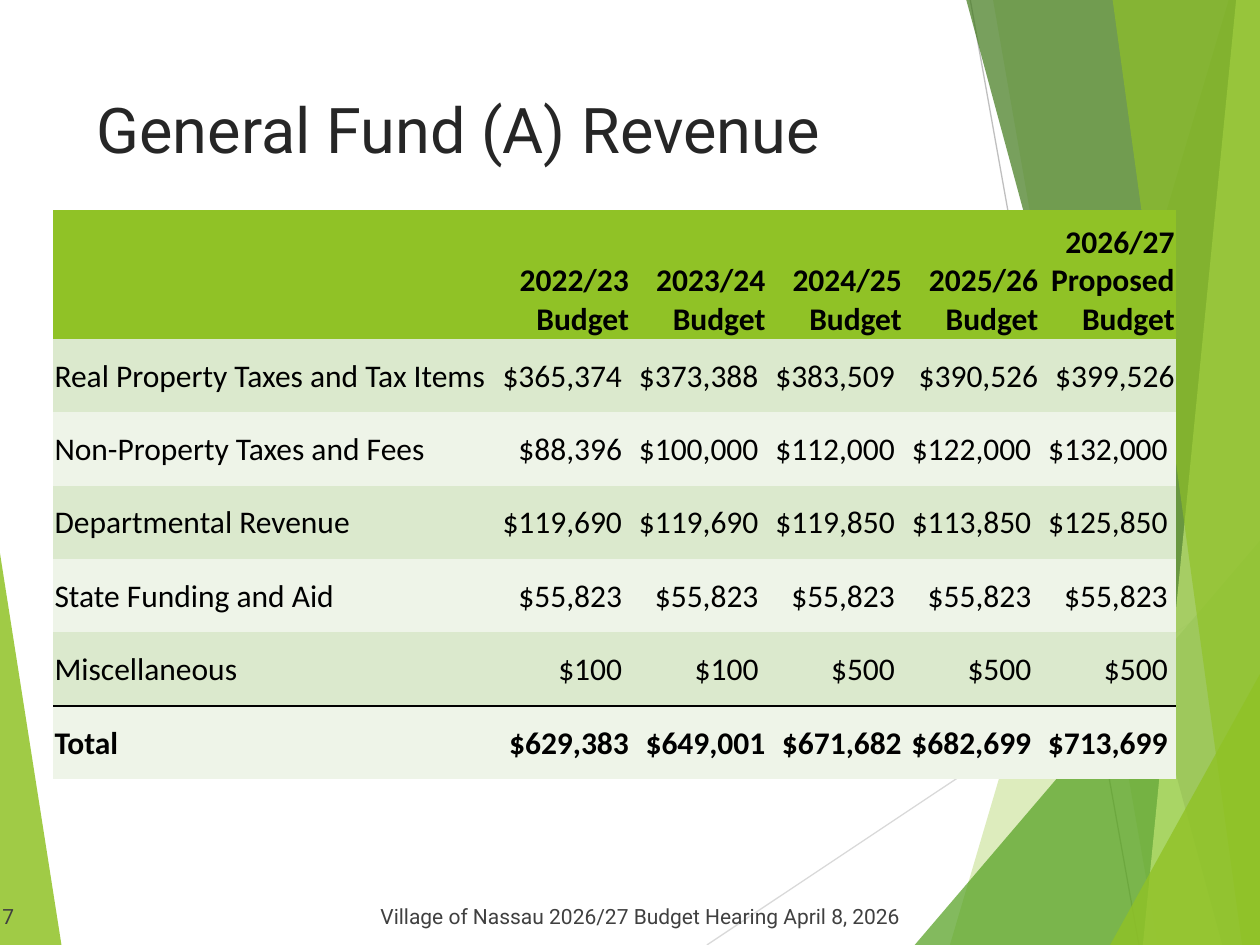
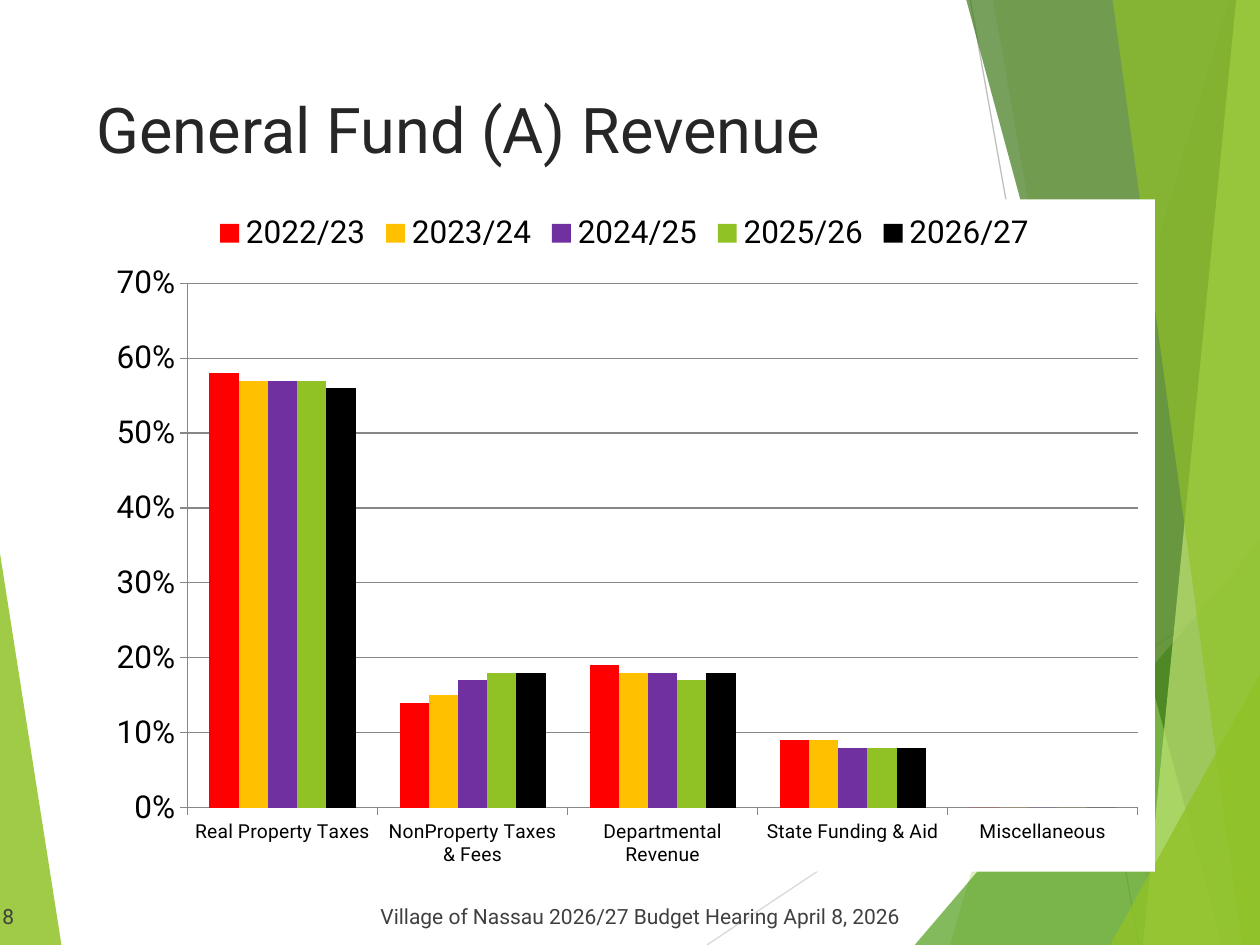
from lxml import etree
from pptx import Presentation
from pptx import util as u
from pptx.chart import data as chart_data
from pptx.dml.color import RGBColor
from pptx.enum import chart as charts, shapes, text
from pptx.oxml import parse_xml
from pptx.oxml.ns import nsdecls, qn

LIME = RGBColor(0x90, 0xC2, 0x26)
GREEN = RGBColor(0x54, 0xA0, 0x21)
FOREST = RGBColor(0x3F, 0x78, 0x19)
PALE_LIME = RGBColor(0xC0, 0xE4, 0x74)
LIGHT_GRAY = RGBColor(0xD9, 0xD9, 0xD9)
MID_GRAY = RGBColor(0xBF, 0xBF, 0xBF)
AXIS_GRAY = RGBColor(0x87, 0x87, 0x87)
TITLE_GRAY = RGBColor(0x26, 0x26, 0x26)
FOOTER_GRAY = RGBColor(0x40, 0x40, 0x40)
ROW_DARK = RGBColor(0xDB, 0xE9, 0xCD)
ROW_LIGHT = RGBColor(0xEE, 0xF4, 0xE8)
RED = RGBColor(0xFF, 0x00, 0x00)
AMBER = RGBColor(0xFF, 0xC0, 0x00)
PURPLE = RGBColor(0x70, 0x30, 0xA0)
BLACK = RGBColor(0x00, 0x00, 0x00)

WIDTH, HEIGHT = 25.4, 19.05
NO_STYLE = "{2D5ABB26-0587-4C30-8999-92F81FD0307C}"
TITLE = "General Fund (A) Revenue"
FOOTER = "Village of Nassau 2026/27 Budget Hearing April 8, 2026"

YEARS = ["2022/23", "2023/24", "2024/25", "2025/26", "2026/27"]
HEADERS = [f"{year}\nBudget" for year in YEARS[:-1]] + ["2026/27 Proposed\nBudget"]
REVENUE = [
    ("Real Property Taxes and Tax Items", 365374, 373388, 383509, 390526, 399526),
    ("Non-Property Taxes and Fees", 88396, 100000, 112000, 122000, 132000),
    ("Departmental Revenue", 119690, 119690, 119850, 113850, 125850),
    ("State Funding and Aid", 55823, 55823, 55823, 55823, 55823),
    ("Miscellaneous", 100, 100, 500, 500, 500),
    ("Total", 629383, 649001, 671682, 682699, 713699),
]
FLUSH_CELLS = {(1, 4), (1, 5), (6, 1), (6, 2), (6, 3)}

CATEGORIES = ["Real Property Taxes", "NonProperty Taxes & Fees",
              "Departmental Revenue", "State Funding & Aid", "Miscellaneous"]
SHARES = [
    (0.58, 0.14, 0.19, 0.09, 0),
    (0.57, 0.15, 0.18, 0.09, 0),
    (0.57, 0.17, 0.18, 0.08, 0),
    (0.57, 0.18, 0.17, 0.08, 0),
    (0.56, 0.18, 0.18, 0.08, 0),
]
SERIES_COLORS = [RED, AMBER, PURPLE, LIME, BLACK]


class Deck:
    heading_font = "Roboto"
    table_font = "Calibri"

    def __init__(self):
        self.presentation = Presentation()
        self.presentation.slide_width = u.Cm(WIDTH)
        self.presentation.slide_height = u.Cm(HEIGHT)
        self.slide = None

    def add_slide(self, title, number):
        self.slide = self.presentation.slides.add_slide(self.presentation.slide_layouts[6])
        self.backdrop()
        self.footer(number)
        self.textbox(title, (1.7, 1.7, 17.63, 3.66), 36, TITLE_GRAY)

    def backdrop(self):
        self.polygon([(0, 11.15), (1.24, HEIGHT), (0, HEIGHT)], LIME, 85)
        self.line((14.25, HEIGHT), (WIDTH, 11.62), LIGHT_GRAY)
        self.line((19.56, 0), (22.96, HEIGHT), MID_GRAY)
        self.panel(24.77, 19.15, LIME, 30)
        self.panel(20.02, 23.34, LIME, 20)
        self.corner(18.44, 10.9, GREEN, 72)
        self.panel(19.48, 24.64, FOREST, 70)
        self.panel(24.92, 23.04, PALE_LIME, 70)
        self.panel(22.43, 25.04, LIME, 65)
        self.corner(22.38, 13.59, LIME, 80)

    def panel(self, top_x, bottom_x, color, opacity):
        self.polygon([(top_x, 0), (bottom_x, HEIGHT), (WIDTH, HEIGHT), (WIDTH, 0)],
                     color, opacity)

    def corner(self, left, top, color, opacity):
        self.polygon([(left, HEIGHT), (WIDTH, top), (WIDTH, HEIGHT)], color, opacity)

    def polygon(self, points, color, opacity):
        start, *rest = [(u.Cm(x), u.Cm(y)) for x, y in points]
        builder = self.slide.shapes.build_freeform(*start)
        builder.add_line_segments(rest, close=True)
        shape = builder.convert_to_shape()
        shape.shadow.inherit = False
        shape.line.fill.background()
        shape.fill.solid()
        shape.fill.fore_color.rgb = color
        fill_color = shape._element.spPr.find(qn("a:solidFill"))[0]
        etree.SubElement(fill_color, qn("a:alpha"), val=str(opacity * 1000))

    def line(self, start, end, color):
        connector = self.slide.shapes.add_connector(
            shapes.MSO_CONNECTOR.STRAIGHT, *map(u.Cm, start + end))
        connector.line.color.rgb = color
        connector.line.width = u.Pt(0.75)
        etree.SubElement(connector._element.spPr, qn("a:effectLst"))

    def textbox(self, words, box, size, color, anchor=text.MSO_ANCHOR.TOP, tab=None):
        text_frame = self.slide.shapes.add_textbox(*map(u.Cm, box)).text_frame
        text_frame.word_wrap = True
        text_frame.vertical_anchor = anchor
        text_frame.text = words
        paragraph = text_frame.paragraphs[0]
        if tab:
            tabs = etree.SubElement(paragraph._p.get_or_add_pPr(), qn("a:tabLst"))
            etree.SubElement(tabs, qn("a:tab"), pos=str(u.Cm(tab)), algn="l")
        self.format_runs(paragraph, self.heading_font, size, color)

    def format_runs(self, paragraph, name, size, color, bold=False):
        for run in paragraph.runs:
            run.font.name = name
            run.font.size = u.Pt(size)
            run.font.color.rgb = color
            run.font.bold = bold

    def footer(self, number):
        self.textbox(f"{number}\t{FOOTER}", (-0.2, 17.83, 19.69, 1.02), 12, FOOTER_GRAY,
                     text.MSO_ANCHOR.BOTTOM, tab=7.62)

    def table(self, headers, rows, flush_cells):
        columns = [8.89] + [2.75] * len(headers)
        heights = [2.6] + [1.48] * len(rows)
        frame = self.slide.shapes.add_table(
            len(heights), len(columns), u.Cm(1.07), u.Cm(4.23),
            u.Cm(sum(columns)), u.Cm(sum(heights)))
        table = frame.table
        table._tbl.tblPr.find(qn("a:tableStyleId")).text = NO_STYLE
        for column, width in zip(table.columns, columns):
            column.width = u.Cm(width)
        for row, height in zip(table.rows, heights):
            row.height = u.Cm(height)
        grid = [["", *headers]]
        grid += [[label, *(f"${amount:,}" for amount in amounts)] for label, *amounts in rows]
        last = len(rows)
        for r, values in enumerate(grid):
            fill = LIME if r == 0 else ROW_DARK if r % 2 else ROW_LIGHT
            for c, value in enumerate(values):
                padded = r and c and (r, c) not in flush_cells
                cell = table.cell(r, c)
                self.cell(cell, value, fill, header=r == 0, bold=r in (0, last),
                          numeric=c > 0, right=0.17 if padded else 0.03)
                if r in (last - 1, last):
                    self.cell_border(cell, "a:lnB" if r < last else "a:lnT")

    def cell(self, cell, value, fill, header, bold, numeric, right):
        cell.margin_left = cell.margin_top = u.Cm(0.03)
        cell.margin_right = u.Cm(right)
        cell.margin_bottom = 0
        cell.vertical_anchor = text.MSO_ANCHOR.BOTTOM if header else text.MSO_ANCHOR.MIDDLE
        cell.fill.solid()
        cell.fill.fore_color.rgb = fill
        cell.text_frame.text = value
        for paragraph in cell.text_frame.paragraphs:
            paragraph.alignment = text.PP_ALIGN.RIGHT if numeric else text.PP_ALIGN.LEFT
            self.format_runs(paragraph, self.table_font, 18, BLACK, bold)

    def cell_border(self, cell, edge):
        cell._tc.get_or_add_tcPr().insert(0, parse_xml(
            f'<{edge} {nsdecls("a")} w="12700"><a:solidFill>'
            f'<a:srgbClr val="{BLACK}"/></a:solidFill></{edge}>'))

    def column_chart(self, categories, names, values, colors):
        data = chart_data.CategoryChartData(number_format="0%")
        data.categories = categories
        for name, shares in zip(names, values):
            data.add_series(name, shares)
        chart = self.slide.shapes.add_chart(
            charts.XL_CHART_TYPE.COLUMN_CLUSTERED, u.Cm(1.9), u.Cm(4.02),
            u.Cm(21.38), u.Cm(13.55), data).chart
        chart.has_title = False
        chart.font.name = self.heading_font
        chart.font.size = u.Pt(18)
        chart.font.color.rgb = BLACK
        chart.has_legend = True
        chart.legend.position = charts.XL_LEGEND_POSITION.TOP
        chart.legend.include_in_layout = False
        plot = chart.plots[0]
        plot.vary_by_categories = False
        plot.gap_width = 150
        plot.overlap = 0
        for series, color in zip(plot.series, colors):
            series.format.fill.solid()
            series.format.fill.fore_color.rgb = color
        self.chart_axes(chart)
        self.chart_frame(chart)

    def chart_axes(self, chart):
        for axis in (chart.category_axis, chart.value_axis):
            axis.major_tick_mark = charts.XL_TICK_MARK.OUTSIDE
            axis.format.line.color.rgb = AXIS_GRAY
        chart.category_axis.tick_labels.font.size = u.Pt(11)
        value_axis = chart.value_axis
        value_axis.minimum_scale = 0
        value_axis.maximum_scale = 0.7
        value_axis.major_unit = 0.1
        value_axis.has_major_gridlines = True
        value_axis.major_gridlines.format.line.color.rgb = AXIS_GRAY
        value_axis.tick_labels.number_format = "0%"
        value_axis.tick_labels.number_format_is_linked = False

    def chart_frame(self, chart):
        chart_space = chart._chartSpace
        chart_space.find(qn("c:chart")).addnext(parse_xml(
            f'<c:spPr {nsdecls("c", "a")}><a:solidFill><a:srgbClr val="FFFFFF"/></a:solidFill>'
            '<a:ln><a:noFill/></a:ln></c:spPr>'))
        plot_area = chart_space.find(".//" + qn("c:plotArea"))
        for layout in plot_area.findall(qn("c:layout")):
            plot_area.remove(layout)
        layout = etree.Element(qn("c:layout"))
        manual = etree.SubElement(layout, qn("c:manualLayout"))
        settings = {"layoutTarget": "inner", "xMode": "edge", "yMode": "edge",
                    "x": "0.088", "y": "0.125", "w": "0.896", "h": "0.78"}
        for tag, value in settings.items():
            etree.SubElement(manual, qn(f"c:{tag}"), val=value)
        plot_area.insert(0, layout)


def main():
    deck = Deck()
    deck.add_slide(TITLE, 7)
    deck.table(HEADERS, REVENUE, FLUSH_CELLS)
    deck.add_slide(TITLE, 8)
    deck.column_chart(CATEGORIES, YEARS, SHARES, SERIES_COLORS)
    deck.presentation.save("out.pptx")


if __name__ == "__main__":
    main()
